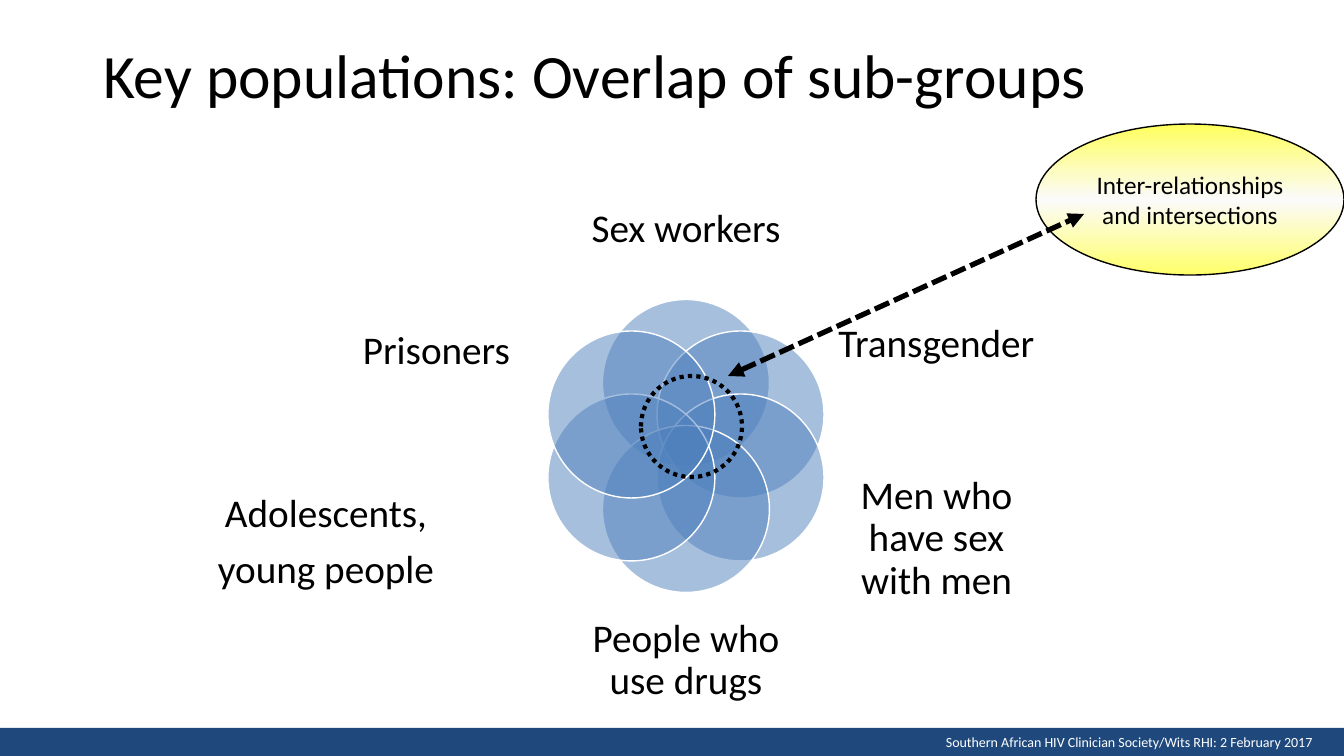
import math

import lxml.etree
import pptx
import pptx.dml.color
import pptx.enum.dml
import pptx.enum.shapes
import pptx.enum.text
import pptx.oxml.ns
import pptx.util

RGB = pptx.dml.color.RGBColor
BLACK = RGB(0x00, 0x00, 0x00)
WHITE = RGB(0xFF, 0xFF, 0xFF)
NAVY = RGB(0x1F, 0x49, 0x7D)
PETAL = RGB(0x4F, 0x81, 0xBD)
YELLOW = RGB(0xFF, 0xFF, 0x5C)
PALE = RGB(0xFB, 0xFB, 0xFB)
LEMON = RGB(0xFF, 0xFF, 0x69)

SHAPE = pptx.enum.shapes.MSO_SHAPE
DASH = pptx.enum.dml.MSO_LINE
ALIGN = pptx.enum.text.PP_ALIGN
ANCHOR = pptx.enum.text.MSO_ANCHOR
NO_FIT = pptx.enum.text.MSO_AUTO_SIZE.NONE
qn = pptx.oxml.ns.qn

EMU_PER_PX = 914400 / 100.8
FONT = "Calibri"


def px(n):
    return pptx.util.Emu(round(n * EMU_PER_PX))


def sub(parent, tag, **attrs):
    return lxml.etree.SubElement(parent, qn(tag), attrs)


def apply(target, values):
    for name, value in values.items():
        setattr(target, name, value)


def write(tf, lines, size, color=BLACK, frame=None, para=None):
    apply(tf, {"word_wrap": True, "auto_size": NO_FIT, **(frame or {})})
    for i, line in enumerate(lines):
        p = tf.paragraphs[0] if i == 0 else tf.add_paragraph()
        apply(p, para or {})
        r = p.add_run()
        r.text = line
        apply(r.font, {"name": FONT, "size": pptx.util.Pt(size)})
        r.font.color.rgb = color


def add_shape(s, kind, box, fill=None, line=None, width=1):
    sp = s.shapes.add_shape(kind, *map(px, box))
    sp.shadow.inherit = False
    if fill is None:
        sp.fill.background()
    else:
        sp.fill.solid()
        sp.fill.fore_color.rgb = fill
    if line is None:
        sp.line.fill.background()
    else:
        sp.line.color.rgb = line
        sp.line.width = pptx.util.Pt(width)
    return sp


def add_footer(s, box):
    x, y, w, h = box
    add_shape(s, SHAPE.RECTANGLE, box, NAVY)
    tb = s.shapes.add_textbox(*map(px, (x + w - 408, y + 1, 389, 27)))
    write(tb.text_frame, ["Southern African HIV Clinician Society/Wits RHI: 2 February 2017"],
          10, WHITE, {"word_wrap": False})


def add_title(s, box):
    sp = s.shapes.title
    apply(sp, dict(zip(("left", "top", "width", "height"), map(px, box))))
    write(sp.text_frame, ["Key populations: Overlap of sub-groups"], 44,
          frame={"vertical_anchor": ANCHOR.TOP},
          para={"alignment": ALIGN.LEFT, "line_spacing": 0.9})


def add_venn(s, box):
    """Six petals clockwise from the top, each with a label placed in the box."""
    x, y, w, h = box
    size, orbit = 167, 63
    cx, cy = x + 488, y + 273
    labels = [
        (["Sex workers"], (383, 0, 210, 114)),
        (["Transgender"], (639, 109, 199, 125)),
        (["Men who have sex with men"], (639, 296, 199, 140)),
        (["People who use drugs"], (383, 431, 210, 114)),
        (["Adolescents,", "young people"], (0, 254, 256, 231)),
        (["Prisoners"], (139, 109, 199, 140)),
    ]
    frame = {"vertical_anchor": ANCHOR.MIDDLE, "margin_left": 0, "margin_right": 0,
             "margin_top": 0, "margin_bottom": 0}
    para = {"alignment": ALIGN.CENTER, "line_spacing": 0.9,
            "space_after": pptx.util.Pt(9.8)}
    for i, (lines, (dx, dy, lw, lh)) in enumerate(labels):
        angle = math.radians(60 * i - 90)
        left = cx + orbit * math.cos(angle) - size / 2
        top = cy + orbit * math.sin(angle) - size / 2
        sp = add_shape(s, SHAPE.OVAL, (left, top, size, size), PETAL, WHITE)
        fill = sp._element.spPr.find(qn("a:solidFill"))
        sub(fill[0], "a:alpha", val="50000")
        tb = s.shapes.add_textbox(*map(px, (x + dx, y + dy, lw, lh)))
        write(tb.text_frame, lines, 28, frame=frame, para=para)

    # Dotted ring around the shared centre
    ring = add_shape(s, SHAPE.OVAL, (cx - 45, cy - 70, 101, 101), None, BLACK, 3)
    ring.line.dash_style = DASH.ROUND_DOT


def add_callout(s, box, target):
    x, y, w, h = box
    sp = add_shape(s, SHAPE.OVAL, box, YELLOW, BLACK)
    # Vertical three-stop gradient
    solid = sp._element.spPr.find(qn("a:solidFill"))
    grad = lxml.etree.Element(qn("a:gradFill"), rotWithShape="1")
    stops = sub(grad, "a:gsLst")
    for pos, color in ((0, YELLOW), (50, PALE), (100, LEMON)):
        sub(sub(stops, "a:gs", pos=str(pos * 1000)), "a:srgbClr", val=str(color))
    sub(grad, "a:lin", ang="5400000", scaled="1")
    solid.getparent().replace(solid, grad)
    write(sp.text_frame, ["Inter-relationships and intersections"], 18,
          frame={"vertical_anchor": ANCHOR.MIDDLE}, para={"alignment": ALIGN.CENTER})

    # Dashed double arrow to the overlap
    arrow = s.shapes.add_connector(pptx.enum.shapes.MSO_CONNECTOR.STRAIGHT,
                                   *map(px, (*target, x + 48, y + 90)))
    arrow.line.color.rgb = BLACK
    apply(arrow.line, {"width": pptx.util.Pt(3.75), "dash_style": DASH.SQUARE_DOT})
    ln = arrow.line._get_or_add_ln()
    for end in ("a:headEnd", "a:tailEnd"):
        sub(ln, end, type="triangle")
    sub(arrow._element.spPr, "a:effectLst")


def main():
    prs = pptx.Presentation()
    prs.slide_width, prs.slide_height = px(1344), px(756)
    s = prs.slides.add_slide(prs.slide_layouts[5])
    add_footer(s, (0, 728, 1344, 28))
    add_title(s, (93, 40, 1159, 146))
    add_venn(s, (198, 173, 838, 545))
    add_callout(s, (1036, 124, 308, 151), (728, 376))
    prs.save("out.pptx")


if __name__ == "__main__":
    main()
